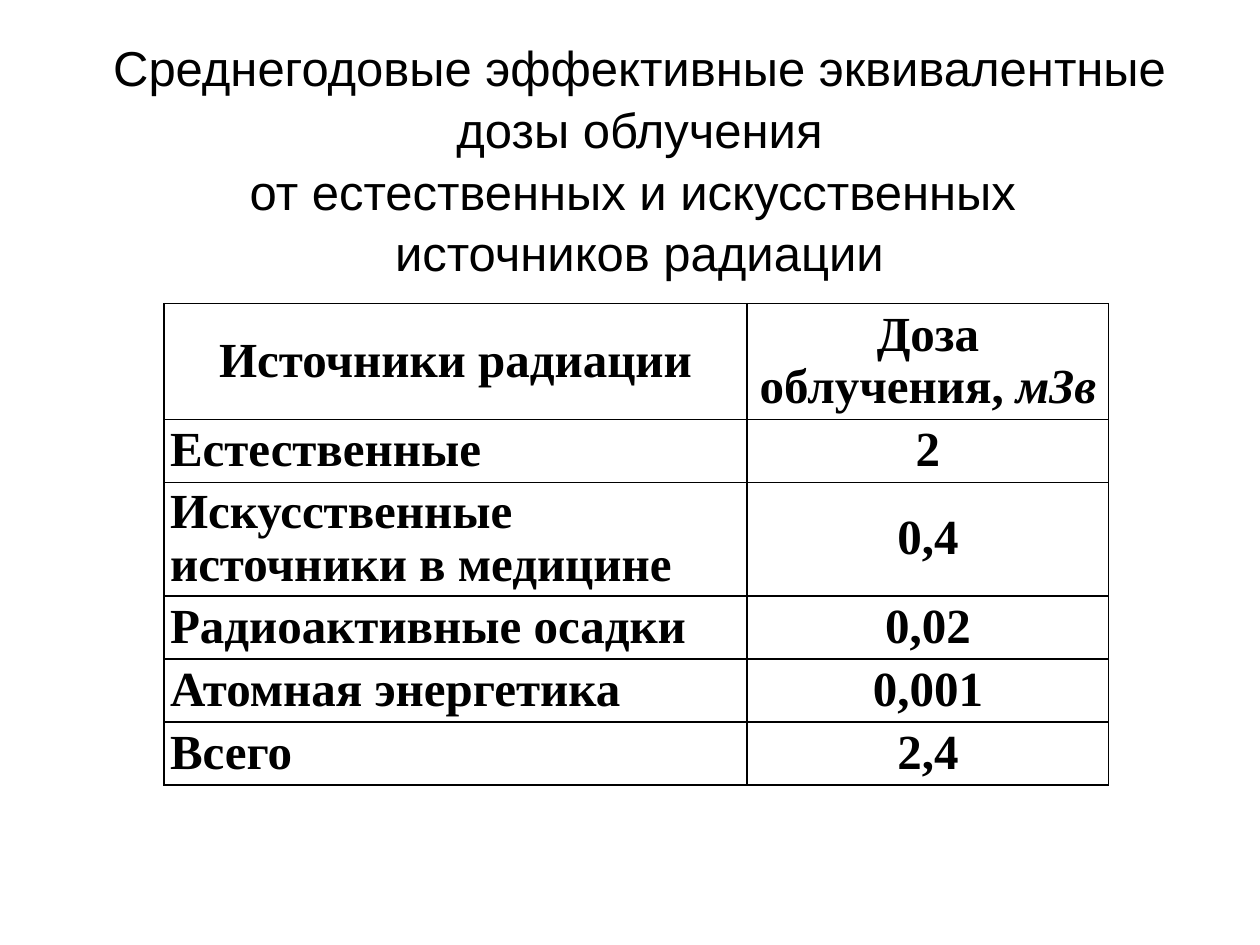
import pptx
import pptx.util
import pptx.dml.color
import pptx.enum.text
import pptx.oxml
import pptx.oxml.ns
import lxml.etree

COLORS = {"ink": "000000", "paper": "FFFFFF"}
ALIGN = pptx.enum.text.PP_ALIGN
MIDDLE = pptx.enum.text.MSO_ANCHOR.MIDDLE
WIDTH, HEIGHT = 10, 7.5

TITLE = [
    "Среднегодовые эффективные эквивалентные",
    " дозы облучения ",
    "от естественных и искусственных ",
    "источников радиации",
]
HEADER = ("Источники радиации", "Доза облучения, ")
UNIT = "мЗв"
DOSES = [
    ("Естественные", "2"),
    ("Искусственные источники в медицине", "0,4"),
    ("Радиоактивные осадки", "0,02"),
    ("Атомная энергетика", "0,001"),
    ("Всего", "2,4"),
]
COLUMNS = [4.63, 2.87]
ROWS = [0.92, 0.5, 0.9, 0.5, 0.5, 0.5]


def rgb(name):
    return pptx.dml.color.RGBColor.from_string(COLORS[name])


def add_text(p, text, font="Arial", size=28, bold=False, italic=False,
             align=ALIGN.CENTER, spacing=1.0):
    p.alignment = align
    p.line_spacing = spacing
    r = p.add_run()
    r.text = text
    r.font.name = font
    r.font.size = pptx.util.Pt(size)
    r.font.bold = bold
    r.font.italic = italic
    r.font.color.rgb = rgb("ink")


def set_borders(cell):
    tcPr = cell._tc.get_or_add_tcPr()
    for i, side in enumerate(("lnL", "lnR", "lnT", "lnB")):
        ln = pptx.oxml.parse_xml(
            f'<a:{side} {pptx.oxml.ns.nsdecls("a")} w="12700"><a:solidFill>'
            f'<a:srgbClr val="{COLORS["ink"]}"/></a:solidFill></a:{side}>')
        tcPr.insert(i, ln)


def format_cell(cell):
    cell.fill.solid()
    cell.fill.fore_color.rgb = rgb("paper")
    cell.vertical_anchor = MIDDLE
    cell.margin_left = cell.margin_right = pptx.util.Inches(0.05)
    cell.margin_top = cell.margin_bottom = 0
    set_borders(cell)


def place_title(s, left, top, width, height):
    sp = s.shapes.title
    sp.left, sp.top, sp.width, sp.height = map(
        pptx.util.Inches, (left, top, width, height))
    tf = sp.text_frame
    tf.word_wrap = True
    tf.auto_size = pptx.enum.text.MSO_AUTO_SIZE.NONE
    tf.vertical_anchor = MIDDLE
    for i, line in enumerate(TITLE):
        p = tf.add_paragraph() if i else tf.paragraphs[0]
        add_text(p, line, spacing=1.05)


def place_table(s, left, top, width, height):
    rows = [HEADER] + DOSES
    table = s.shapes.add_table(
        len(rows), len(COLUMNS),
        *map(pptx.util.Inches, (left, top, width, height))).table
    table.first_row = table.horz_banding = False
    for column, share in zip(table.columns, COLUMNS):
        column.width = pptx.util.Inches(width * share / sum(COLUMNS))
    for row, share in zip(table.rows, ROWS):
        row.height = pptx.util.Inches(height * share / sum(ROWS))
    style = {"font": "Times New Roman", "bold": True, "spacing": 0.97}
    for i, row in enumerate(rows):
        for j, text in enumerate(row):
            cell = table.cell(i, j)
            format_cell(cell)
            align = ALIGN.CENTER
            if i and j == 0:
                align = ALIGN.LEFT if i == 2 else ALIGN.JUSTIFY
            add_text(cell.text_frame.paragraphs[0], text, align=align, **style)
    add_text(table.cell(0, 1).text_frame.paragraphs[0], UNIT, italic=True, **style)


def main():
    prs = pptx.Presentation()
    prs.slide_width = pptx.util.Inches(WIDTH)
    prs.slide_height = pptx.util.Inches(HEIGHT)
    s = prs.slides.add_slide(prs.slide_layouts[5])
    s.background.fill.solid()
    s.background.fill.fore_color.rgb = rgb("paper")
    place_table(s, 0.13 * WIDTH, 2.41, sum(COLUMNS), sum(ROWS))
    place_title(s, 0, 0.26, 10.15, 1.99)
    prs.save("out.pptx")


if __name__ == "__main__":
    main()
